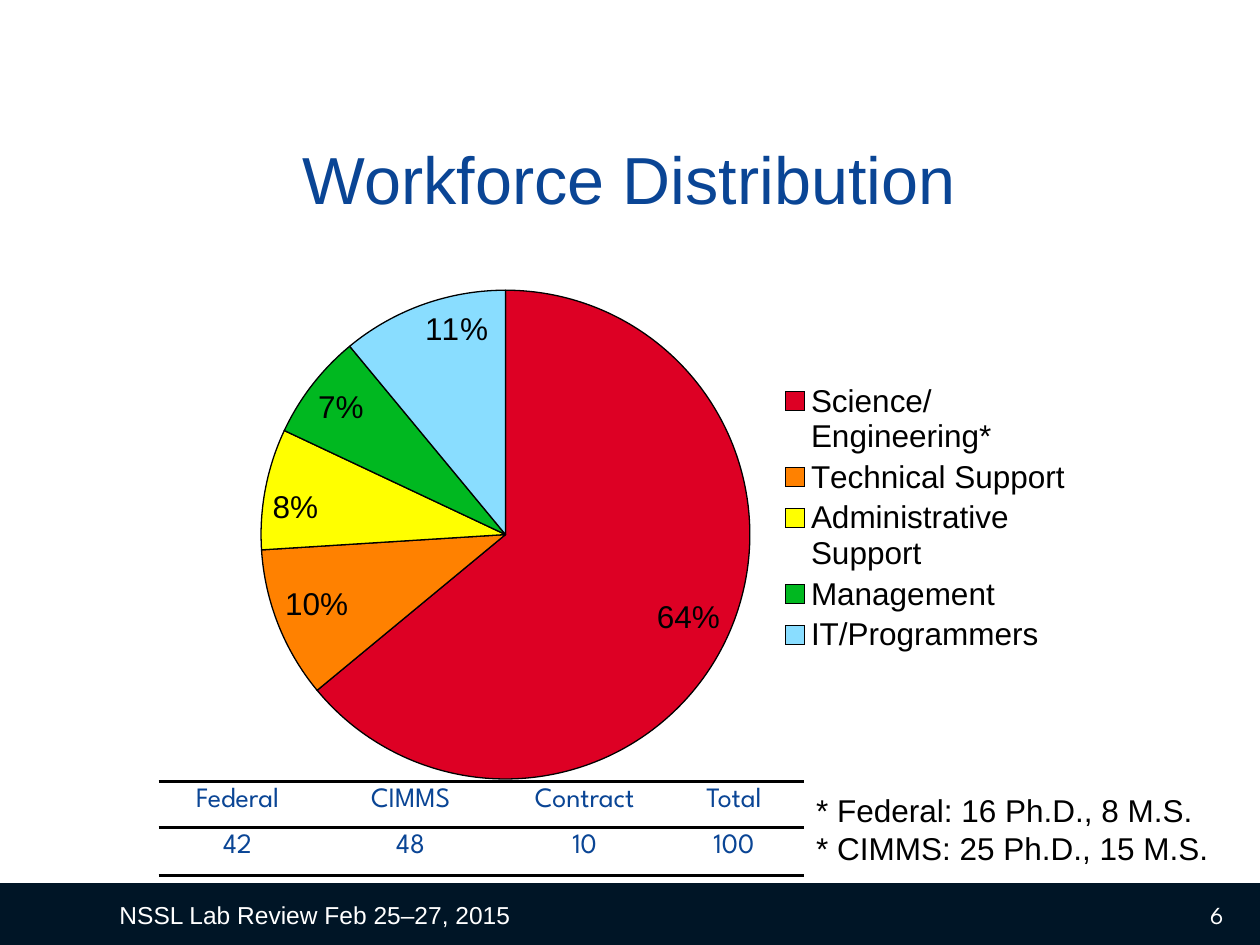
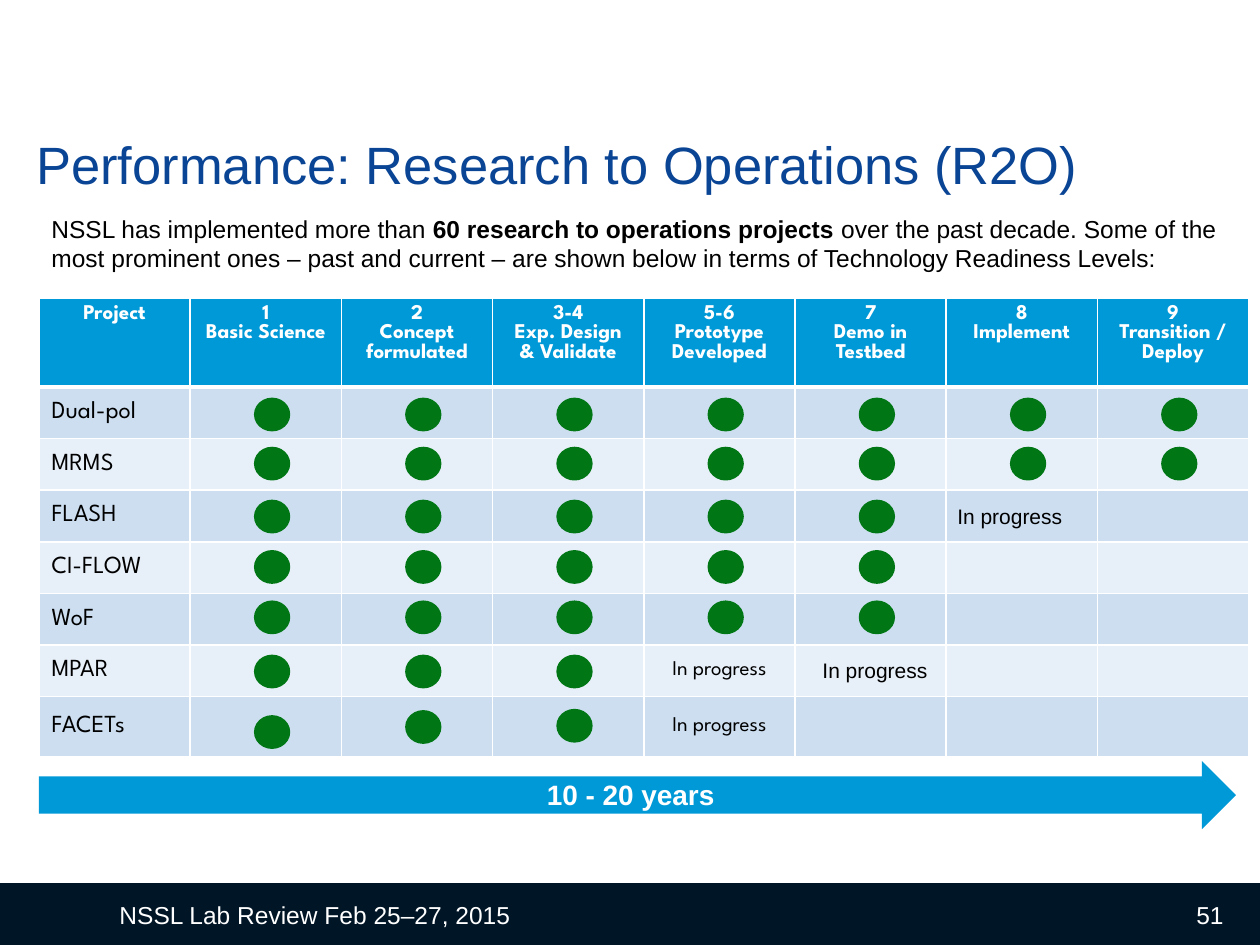
import pptx
import pptx.chart.data
import pptx.dml.color
import pptx.enum.chart
import pptx.enum.shapes
import pptx.enum.text
import pptx.oxml
import pptx.oxml.ns
import pptx.util
from lxml import etree

Inches = pptx.util.Inches
Pt = pptx.util.Pt
ALIGN = pptx.enum.text.PP_ALIGN
ANCHOR = pptx.enum.text.MSO_ANCHOR
SHAPE = pptx.enum.shapes.MSO_SHAPE

BODY_FONT = "Arial"
TABLE_FONT = "League Spartan"
NAVY, BLUE, SKY = "001526", "0A4595", "0099D8"
GREEN, BLACK, WHITE = "007714", "000000", "FFFFFF"
BANDS = ("CCDEF0", "E7EFF8")
PLAIN_TABLE_STYLE = "{2D5ABB26-0587-4C30-8999-92F81FD0307C}"

WORKFORCE = (
    ("Science/Engineering*", 64, "DD0024"),
    ("Technical Support", 10, "FF8100"),
    ("Administrative Support", 8, "FFFF00"),
    ("Management", 7, "00B820"),
    ("IT/Programmers", 11, "89DDFF"),
)
STAFF = (("Federal", "CIMMS", "Contract", "Total"), ("42", "48", "10", "100"))
LEVELS = (
    "Project", "1\nBasic Science", "2\nConcept formulated",
    "3-4\nExp. Design & Validate", "5-6\nPrototype Developed",
    "7\nDemo in\nTestbed", "8\nImplement", "9\nTransition / Deploy",
)
PROJECT_DOT_TOPS = {
    "Dual-pol": [0.8] * 7,
    "MRMS": [1.19] * 7,
    "FLASH": [1.61] * 5,
    "CI-FLOW": [2.01] * 5,
    "WoF": [2.41] * 5,
    "MPAR": [2.84] * 3,
    "FACETs": [3.32, 3.28, 3.27],
}
PROGRESS_COLUMN = 4
PROGRESS_PROJECTS = ("MPAR", "FACETs")


def color(value):
    return pptx.dml.color.RGBColor.from_string(value)


def style_font(font, size, value, name=BODY_FONT, bold=False):
    font.size = Pt(size)
    font.name = name
    font.bold = bold
    font.color.rgb = color(value)


def style_paragraphs(frame, size, value, align=ALIGN.LEFT, name=BODY_FONT, bold=False):
    for paragraph in frame.paragraphs:
        paragraph.alignment = align
        style_font(paragraph.font, size, value, name, bold)


def add_text(slide, box, text, size, value, align=ALIGN.LEFT, anchor=ANCHOR.TOP,
             name=BODY_FONT, bold=False, wrap=True):
    frame = slide.shapes.add_textbox(*map(Inches, box)).text_frame
    frame.word_wrap = wrap
    frame.vertical_anchor = anchor
    frame.text = text
    style_paragraphs(frame, size, value, align, name, bold)
    return frame


def add_filled_shape(slide, kind, box, value):
    shape = slide.shapes.add_shape(kind, *map(Inches, box))
    shape.shadow.inherit = False
    shape.fill.solid()
    shape.fill.fore_color.rgb = color(value)
    shape.line.fill.background()
    return shape


def add_frame(presentation, title, title_box, title_size, title_align, number, number_font):
    slide = presentation.slides.add_slide(presentation.slide_layouts[6])
    add_filled_shape(slide, SHAPE.RECTANGLE, (0, 7.01, 10, 0.5), NAVY)
    add_text(slide, title_box, title, title_size, BLUE, title_align, ANCHOR.BOTTOM)
    add_text(slide, (0.85, 7.06, 4.57, 0.4), "NSSL Lab Review Feb 25–27, 2015",
             14, WHITE, anchor=ANCHOR.MIDDLE)
    add_text(slide, (7.48, 7.06, 2.33, 0.4), number, 14, WHITE, ALIGN.RIGHT,
             ANCHOR.MIDDLE, number_font)
    return slide


def set_borders(cell, value, **widths):
    properties = cell._tc.get_or_add_tcPr()
    borders = [
        pptx.oxml.parse_xml(
            f'<a:ln{side} {pptx.oxml.ns.nsdecls("a")} w="{Pt(widths[side])}">'
            f'<a:solidFill><a:srgbClr val="{value}"/></a:solidFill></a:ln{side}>')
        for side in "LRTB" if side in widths
    ]
    for position, border in enumerate(borders):
        properties.insert(position, border)


def add_plain_table(slide, left, top, widths, heights):
    table = slide.shapes.add_table(
        len(heights), len(widths), Inches(left), Inches(top),
        Inches(sum(widths)), Inches(sum(heights))).table
    table.first_row = table.horz_banding = False
    table._tbl.tblPr.find(pptx.oxml.ns.qn("a:tableStyleId")).text = PLAIN_TABLE_STYLE
    for column, width in zip(table.columns, widths):
        column.width = Inches(width)
    for row, height in zip(table.rows, heights):
        row.height = Inches(height)
    return table


def set_layout(parent, position, x, y, width, height, inner=False):
    namespace = pptx.oxml.ns.nsdecls("c")
    target = '<c:layoutTarget val="inner"/>' if inner else ""
    values = "".join(f'<c:{key} val="{value}"/>' for key, value in
                     (("x", x), ("y", y), ("w", width), ("h", height)))
    for existing in parent.findall(pptx.oxml.ns.qn("c:layout")):
        parent.remove(existing)
    parent.insert(position, etree.fromstring(
        f'<c:layout {namespace}><c:manualLayout>{target}<c:xMode val="edge"/>'
        f'<c:yMode val="edge"/>{values}</c:manualLayout></c:layout>'))


def add_workforce_pie(slide, box):
    names, values, fills = zip(*WORKFORCE)
    data = pptx.chart.data.CategoryChartData()
    data.categories = names
    data.add_series("Series 1", values)
    chart = slide.shapes.add_chart(
        pptx.enum.chart.XL_CHART_TYPE.PIE, *map(Inches, box), data).chart
    chart.has_title = False
    style_font(chart.font, 18, BLACK)
    chart.has_legend = True
    chart.legend.position = pptx.enum.chart.XL_LEGEND_POSITION.RIGHT
    chart.legend.include_in_layout = False
    plot = chart.plots[0]
    plot.vary_by_categories = True
    plot.has_data_labels = True
    labels = plot.data_labels
    labels.show_percentage = True
    labels.show_value = False
    labels.number_format = "0%"
    labels.number_format_is_linked = False
    labels.position = pptx.enum.chart.XL_LABEL_POSITION.INSIDE_END
    style_font(labels.font, 18, BLACK)
    for index, value in enumerate(fills):
        wedge = plot.series[0].points[index].format
        wedge.fill.solid()
        wedge.fill.fore_color.rgb = color(value)
        wedge.line.color.rgb = color(BLACK)
        wedge.line.width = Pt(0.75)
    plot_area = chart._chartSpace.chart.plotArea
    set_layout(plot_area, 0, 0.1, 0.09, 0.53, 0.88, inner=True)
    set_layout(chart.legend._element, 1, 0.66, 0.25, 0.32, 0.5)


def add_staff_table(slide, left, top):
    table = add_plain_table(slide, left, top, (1.25, 1.5, 1.26, 1.11), (0.37, 0.38))
    for row, texts in enumerate(STAFF):
        for column, text in enumerate(texts):
            cell = table.cell(row, column)
            cell.fill.background()
            cell.text = text
            style_paragraphs(cell.text_frame, 16, BLUE, ALIGN.CENTER, TABLE_FONT)
            set_borders(cell, BLACK, T=2, B=2)


def add_readiness_table(slide, left, top, column_width):
    heights = [0.68] + [0.41] * 6 + [0.48]
    table = add_plain_table(slide, left, top, [column_width] * len(LEVELS), heights)
    rows = [LEVELS]
    for project in PROJECT_DOT_TOPS:
        texts = [project] + [""] * (len(LEVELS) - 1)
        if project in PROGRESS_PROJECTS:
            texts[PROGRESS_COLUMN] = "In progress"
        rows.append(texts)
    for row, texts in enumerate(rows):
        header = row == 0
        for column, text in enumerate(texts):
            cell = table.cell(row, column)
            cell.fill.solid()
            cell.fill.fore_color.rgb = color(SKY if header else BANDS[(row - 1) % 2])
            cell.vertical_anchor = ANCHOR.TOP if header else ANCHOR.MIDDLE
            cell.text = text
            label = column == 0 and not header
            style_paragraphs(cell.text_frame, 14 if label else 12,
                             WHITE if header else BLACK,
                             ALIGN.LEFT if label else ALIGN.CENTER, TABLE_FONT, header)
            set_borders(cell, WHITE, L=1, R=1, T=3 if row == 1 else 1, B=3 if header else 1)
    for tops in PROJECT_DOT_TOPS.values():
        for column, dot_top in enumerate(tops):
            dot = add_filled_shape(
                slide, SHAPE.OVAL,
                (left + 1.72 + column * column_width, top + dot_top, 0.26, 0.24), GREEN)
            dot.line.color.rgb = color(GREEN)
            dot.line.width = Pt(2)


def add_timeline(slide, left, top):
    arrow = add_filled_shape(slide, SHAPE.RIGHT_ARROW, (left, top, 9.5, 0.54), SKY)
    arrow.adjustments[0] = 0.55
    arrow.adjustments[1] = 0.5
    add_text(slide, (left + 3.68, top + 0.08, 2.03, 0.37), "10 - 20 years",
             16, WHITE, ALIGN.CENTER, bold=True)


def add_introduction(slide, box):
    frame = add_text(slide, box, "", 14, BLACK)
    paragraph = frame.paragraphs[0]
    for text, bold in (
        ("NSSL has implemented more than ", False),
        ("60 research to operations projects ", True),
        ("over the past decade. Some of the most prominent ones – past and current – "
         "are shown below in terms of Technology Readiness Levels:", False),
    ):
        run = paragraph.add_run()
        run.text = text
        style_font(run.font, 14, BLACK, bold=bold)


def build_workforce_slide(presentation):
    slide = add_frame(presentation, "Workforce Distribution", (0.85, 1, 8.29, 0.78),
                      38, ALIGN.CENTER, "6", TABLE_FONT)
    add_workforce_pie(slide, (1.34, 1.89, 7.32, 4.44))
    add_text(slide, (6.38, 6.23, 3.6, 0.71),
             "* Federal: 16 Ph.D., 8 M.S.\n* CIMMS: 25 Ph.D., 15 M.S.", 18, BLACK)
    add_staff_table(slide, 1.26, 6.2)


def build_performance_slide(presentation):
    slide = add_frame(presentation, "Performance: Research to Operations (R2O)",
                      (0.19, 0.82, 9.62, 0.78), 30, ALIGN.LEFT, "51", BODY_FONT)
    add_introduction(slide, (0.31, 1.65, 9.57, 0.57))
    add_readiness_table(slide, 0.31, 2.37, 1.2)
    add_timeline(slide, 0.31, 6.04)
    for left, top in ((7.48, 3.95), (6.41, 5.17)):
        add_text(slide, (left, top, 1.07, 0.3), "In progress", 12, BLACK,
                 ALIGN.CENTER, wrap=False)


def main():
    presentation = pptx.Presentation()
    presentation.slide_width = Inches(10)
    presentation.slide_height = Inches(7.5)
    build_workforce_slide(presentation)
    build_performance_slide(presentation)
    presentation.save("out.pptx")


if __name__ == "__main__":
    main()
